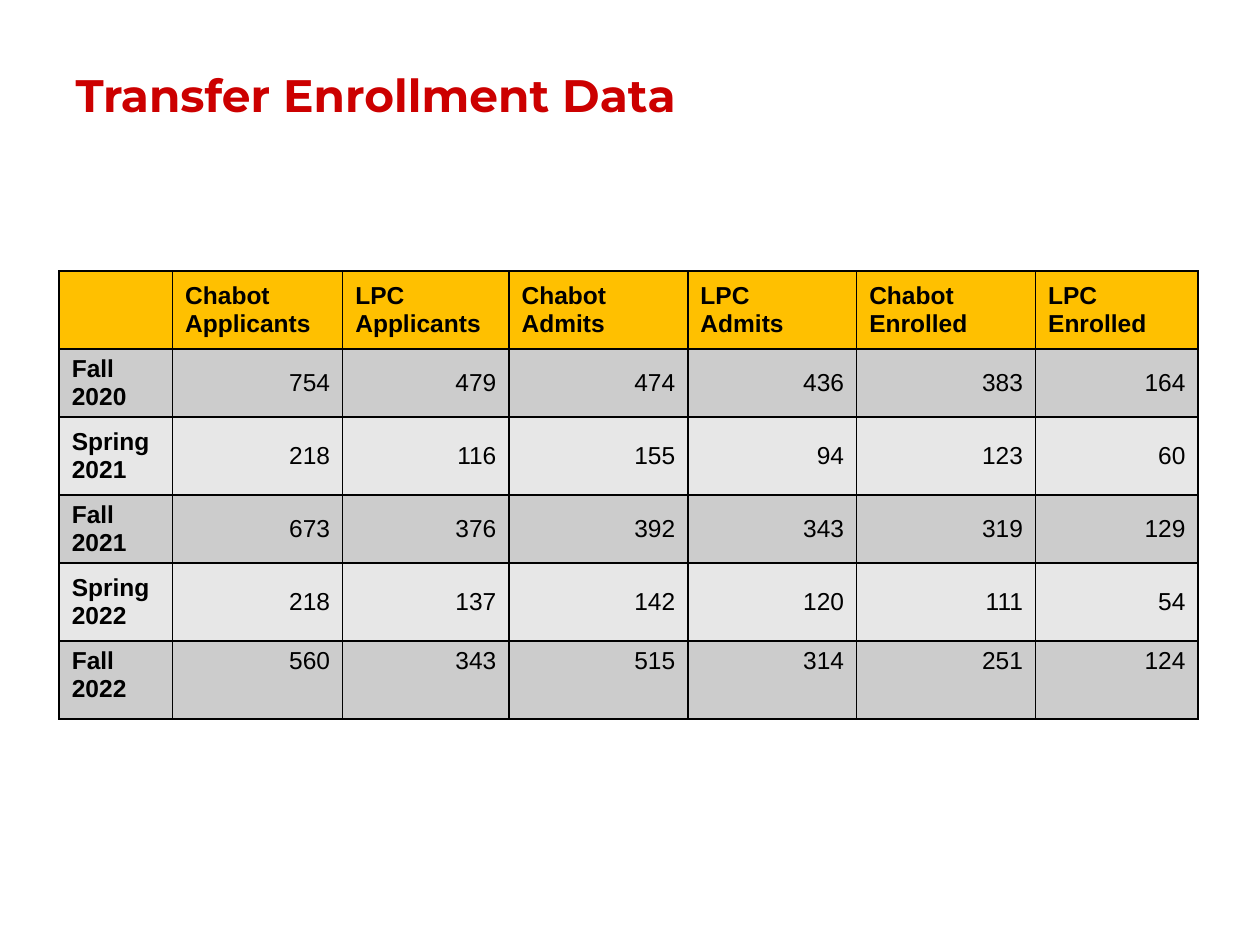
from dataclasses import dataclass

from lxml import etree
from pptx import Presentation
from pptx import util as u
from pptx.dml.color import RGBColor
from pptx.enum import text
from pptx.oxml import ns


@dataclass(frozen=True)
class Theme:
    title_color: str = "CC0000"
    ink: str = "000000"
    header_fill: str = "FFC000"
    odd_fill: str = "CCCCCC"
    even_fill: str = "E7E7E7"
    title_font: str = "Montserrat"
    body_font: str = "Arial"
    title_size: int = 26
    body_size: int = 14
    border_width: int = 1


theme = Theme()


def write_text(frame, content, font=theme.body_font, size=theme.body_size,
               color=theme.ink, bold=False, align=text.PP_ALIGN.LEFT):
    for index, line in enumerate(content.split("\n")):
        paragraph = frame.add_paragraph() if index else frame.paragraphs[0]
        paragraph.alignment = align
        run = paragraph.add_run()
        run.text = line
        run.font.name = font
        run.font.size = u.Pt(size)
        run.font.bold = bold
        run.font.color.rgb = RGBColor.from_string(color)


def add_borders(cell):
    properties = cell._tc.get_or_add_tcPr()
    for side in ("lnL", "lnR", "lnT", "lnB"):
        line = etree.SubElement(properties, ns.qn(f"a:{side}"), w=str(u.Pt(theme.border_width)))
        fill = etree.SubElement(line, ns.qn("a:solidFill"))
        etree.SubElement(fill, ns.qn("a:srgbClr"), val=theme.ink)


presentation = Presentation()
presentation.slide_width = u.Inches(10)
presentation.slide_height = u.Inches(7.5)
slide = presentation.slides.add_slide(presentation.slide_layouts[5])

title = slide.shapes.title
title.left, title.top = u.Inches(0.5), u.Inches(0.44)
title.width, title.height = u.Inches(9), u.Inches(0.62)
title.text_frame.vertical_anchor = text.MSO_ANCHOR.MIDDLE
title.text_frame.word_wrap = True
write_text(title.text_frame, "Transfer Enrollment Data", font=theme.title_font,
           size=theme.title_size, color=theme.title_color, bold=True)

enrollment = [
    ["", "Chabot\nApplicants", "LPC\nApplicants", "Chabot Admits", "LPC\nAdmits",
     "Chabot Enrolled", "LPC Enrolled"],
    ["Fall 2020", 754, 479, 474, 436, 383, 164],
    ["Spring 2021", 218, 116, 155, 94, 123, 60],
    ["Fall 2021", 673, 376, 392, 343, 319, 129],
    ["Spring 2022", 218, 137, 142, 120, 111, 54],
    ["Fall\n2022", 560, 343, 515, 314, 251, 124],
]
column_widths = [0.9, 1.35, 1.32, 1.42, 1.34, 1.42, 1.29]
row_heights = [0.62, 0.54, 0.62, 0.54, 0.62, 0.62]

table = slide.shapes.add_table(
    len(row_heights), len(column_widths), u.Inches(0.47), u.Inches(2.15),
    u.Inches(sum(column_widths)), u.Inches(sum(row_heights))).table
for column, width in zip(table.columns, column_widths):
    column.width = u.Inches(width)
for row, height in zip(table.rows, row_heights):
    row.height = u.Inches(height)

last_row = len(enrollment) - 1
for row_index, values in enumerate(enrollment):
    if row_index == 0:
        row_fill = theme.header_fill
    else:
        row_fill = theme.odd_fill if row_index % 2 else theme.even_fill
    for column_index, value in enumerate(values):
        cell = table.cell(row_index, column_index)
        add_borders(cell)
        cell.fill.solid()
        cell.fill.fore_color.rgb = RGBColor.from_string(row_fill)
        cell.vertical_anchor = (text.MSO_ANCHOR.TOP if row_index == last_row
                                else text.MSO_ANCHOR.MIDDLE)
        is_label = row_index == 0 or column_index == 0
        if value != "":
            write_text(cell.text_frame, str(value), bold=is_label,
                       align=text.PP_ALIGN.LEFT if is_label else text.PP_ALIGN.RIGHT)

presentation.save("out.pptx")
